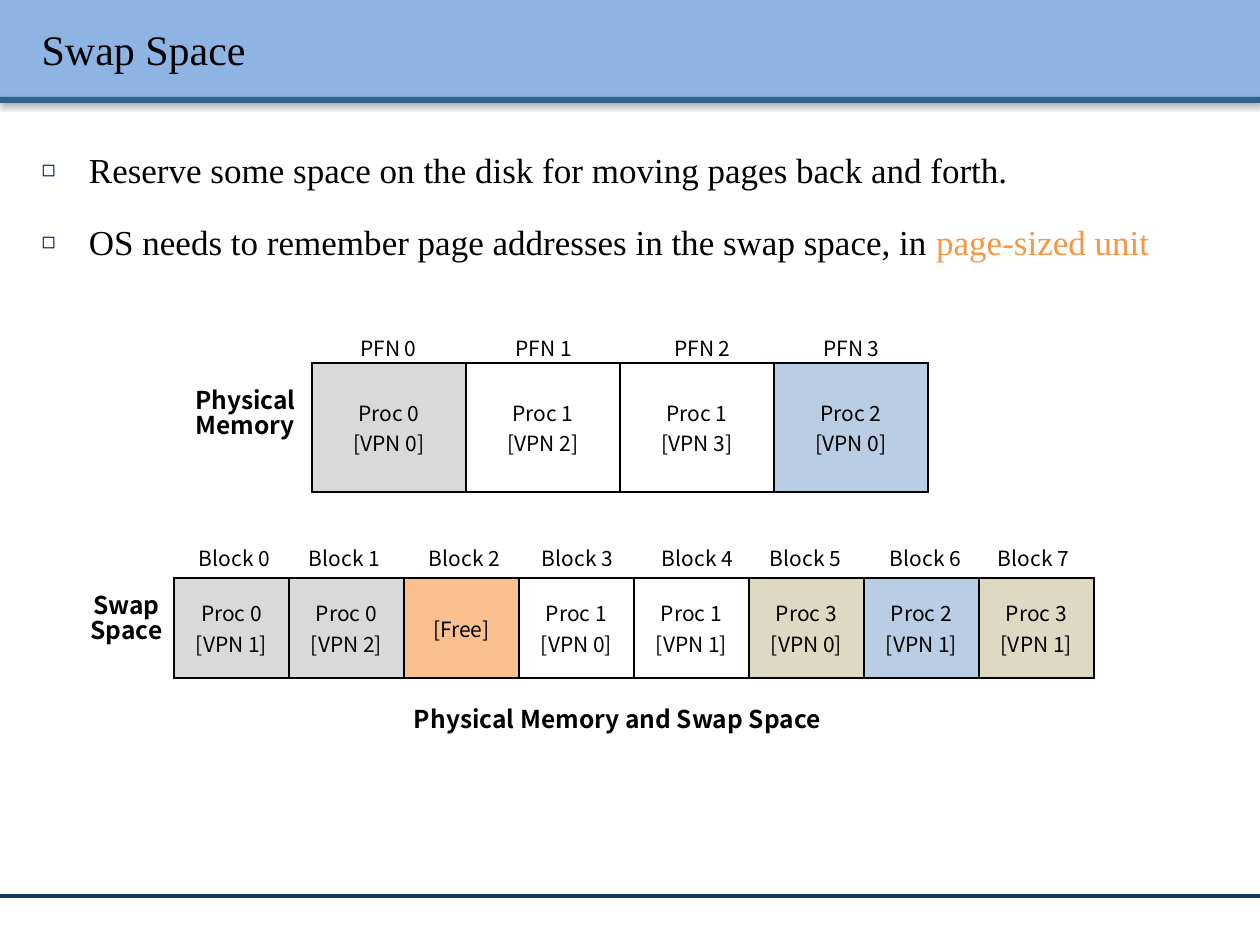
from pptx import Presentation
from pptx.dml.color import RGBColor
from pptx.enum.shapes import MSO_CONNECTOR, MSO_SHAPE
from pptx.enum.text import MSO_ANCHOR, PP_ALIGN
from pptx.oxml import parse_xml
from pptx.util import Emu, Pt

NS = 'xmlns:a="http://schemas.openxmlformats.org/drawingml/2006/main"'
SHADOW = (f'<a:effectLst {NS}><a:outerShdw blurRad="39400" dist="20300" dir="5400000">'
          '<a:srgbClr val="000000"><a:alpha val="38000"/></a:srgbClr>'
          '</a:outerShdw></a:effectLst>')
SERIF, SANS = "Times New Roman", "Noto Sans CJK KR"


def hue(code):
    return RGBColor.from_string(code)


def style(frame, size, face, bold=False, align=PP_ALIGN.CENTER):
    for para in frame.paragraphs:
        para.alignment = align
        for run in para.runs:
            font = run.font
            font.size, font.name, font.bold = Pt(size), face, bold
            font.color.rgb = hue("000000")


def px(*nums):
    return [Emu(round(n * 914400 / 126)) for n in nums]


deck = Presentation()
deck.slide_width, deck.slide_height = px(1260, 945)
slide = deck.slides.add_slide(deck.slide_layouts[1])
shapes = slide.shapes
title, body = slide.placeholders

# Header bars and footer line
for top, high, fill in [(0, 97, "8EB4E3"), (97, 6, "376092")]:
    bar = shapes.add_shape(MSO_SHAPE.RECTANGLE, *px(0, top, 1260, high))
    bar.fill.solid()
    bar.fill.fore_color.rgb = hue(fill)
    bar.line.fill.background()
    bar._element.spPr.append(parse_xml(SHADOW))
rule = shapes.add_connector(MSO_CONNECTOR.STRAIGHT, *px(0, 896, 1260, 896))
rule.line.color.rgb = hue("17375E")
rule.line.width = Pt(2)
rule._element.spPr.append(parse_xml(f"<a:effectLst {NS}/>"))

# Title, in front of the bars
shapes._spTree.append(title._element)
title.left, title.top, title.width, title.height = px(29, 8, 1211, 81)
frame = title.text_frame
frame.text = "Swap Space"
frame.vertical_anchor = MSO_ANCHOR.MIDDLE
style(frame, 24, SERIF, align=PP_ALIGN.LEFT)
props = frame.paragraphs[0].runs[0].font._element
props.insert(1, parse_xml(SHADOW))

# Bullet list
shapes._spTree.append(body._element)
body.left, body.top, body.width, body.height = px(29, 121, 1211, 759)
frame = body.text_frame
frame.text = ("Reserve some space on the disk for moving pages back and forth.\n"
              "OS needs to remember page addresses in the swap space, in ")
frame.paragraphs[1].add_run().text = "page-sized unit"
style(frame, 20, SERIF, align=PP_ALIGN.LEFT)
frame.paragraphs[1].runs[1].font.color.rgb = hue("F79646")
for num, para in enumerate(frame.paragraphs):
    props = para._p.get_or_add_pPr()
    props.set("marL", "342900")
    props.set("indent", "-342900")
    for mark in ['<a:buClr {}><a:srgbClr val="002060"/></a:buClr>',
                 '<a:buSzPct {} val="65000"/>', '<a:buChar {} char="◻"/>']:
        props.append(parse_xml(mark.format(NS)))
    para.line_spacing = 1.5
    para.space_before = Pt(5.5 if num else 0)

# Memory and swap tables: place, column width, row height, cells
gray, blue, tan, peach = "D9D9D9", "B9CDE5", "DDD9C3", "FAC090"
memory = [("Proc 0\n[VPN 0]", gray), ("Proc 1\n[VPN 2]", None),
          ("Proc 1\n[VPN 3]", None), ("Proc 2\n[VPN 0]", blue)]
swap = [("Proc 0\n[VPN 1]", gray), ("Proc 0\n[VPN 2]", gray), ("[Free]", peach),
        ("Proc 1\n[VPN 0]", None), ("Proc 1\n[VPN 1]", None),
        ("Proc 3\n[VPN 0]", tan), ("Proc 2\n[VPN 1]", blue), ("Proc 3\n[VPN 1]", tan)]
for left, top, wide, high, cells in [(312, 363, 154, 129, memory),
                                     (174, 578, 115, 100, swap)]:
    grid = shapes.add_table(1, len(cells), *px(left, top, wide * len(cells), high)).table
    grid.first_row = grid.horz_banding = False
    for col, (text, fill) in enumerate(cells):
        grid.columns[col].width = px(wide)[0]
        cell = grid.cell(0, col)
        cell.text_frame.text = text
        cell.vertical_anchor = MSO_ANCHOR.MIDDLE
        style(cell.text_frame, 12, SANS)
        for side in "LRTB":
            cell._tc.get_or_add_tcPr().append(parse_xml(
                f'<a:ln{side} {NS} w="12700"><a:solidFill><a:srgbClr val="000000"/>'
                f'</a:solidFill></a:ln{side}>'))
        if fill:
            cell.fill.solid()
            cell.fill.fore_color.rgb = hue(fill)
        else:
            cell.fill.background()

# Labels: text, left, top, width, height, size, bold
labels = [("Physical\nMemory", 134, 383, 223, 72, 14, True),
          ("Swap\nSpace", 15, 588, 223, 72, 14, True),
          ("Physical Memory and Swap Space", 372, 698, 491, 43, 14, True)]
for name, top, lefts in [("PFN", 329, [277, 432, 591, 740]),
                         ("Block", 539, [123, 233, 353, 466, 586, 694, 814, 922])]:
    labels += [(f"{name} {num}", left, top, 223, 38, 12, False)
               for num, left in enumerate(lefts)]
for text, left, top, wide, high, size, bold in labels:
    frame = shapes.add_textbox(*px(left, top, wide, high)).text_frame
    frame.word_wrap = True
    frame.text = text
    style(frame, size, SANS, bold)
    for para in frame.paragraphs:
        para.line_spacing = 0.85 if "\n" in text else 1.0

deck.save("out.pptx")
